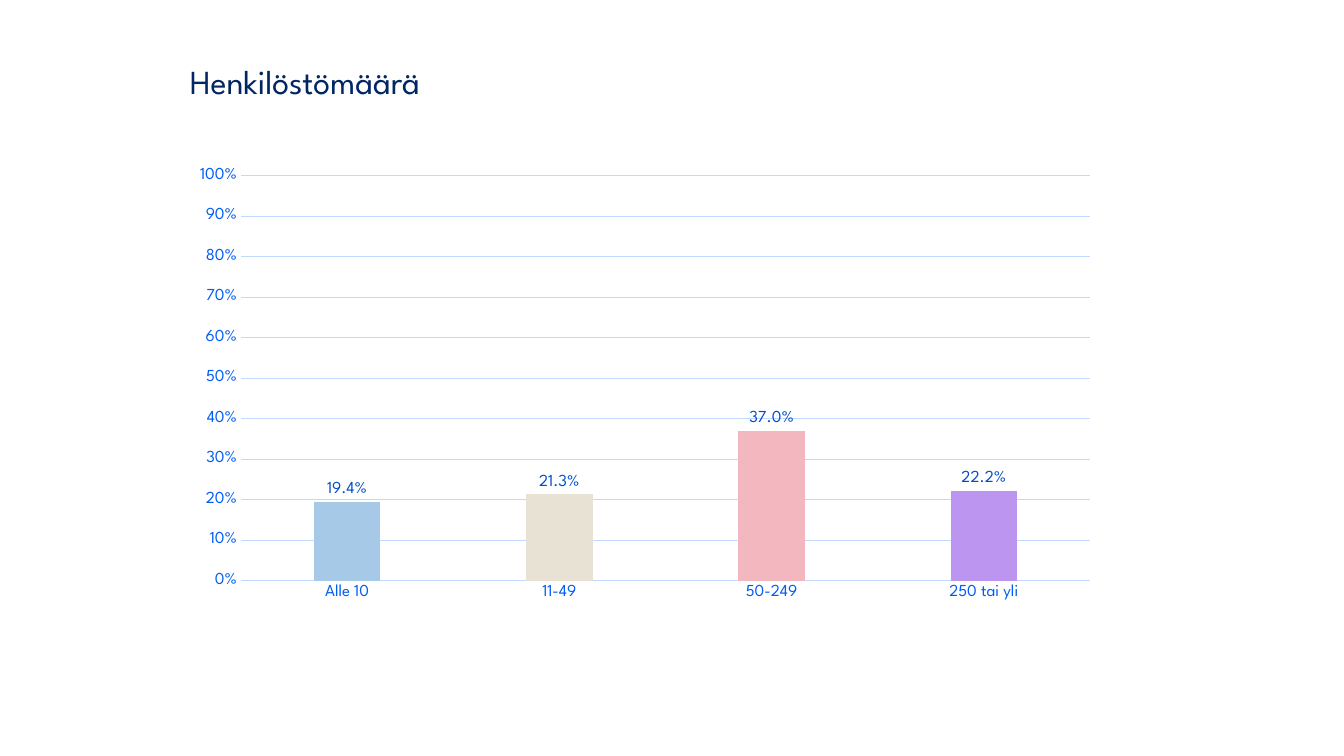
from lxml import etree
from pptx import Presentation
from pptx import util as u
from pptx.chart.data import CategoryChartData
from pptx.dml.color import RGBColor
from pptx.enum import chart as ch, text
from pptx.oxml.ns import qn

THEME = {
    "face": "League Spartan",
    "title": {"size": 24, "color": "002663"},
    "chart": {"size": 10, "color": "002663"},
    "axis": {"size": 12, "color": "005DF3"},
    "label": {"size": 12, "color": "004DCA"},
    "grid": {"width": 0.75, "color": "C1D9FF"},
}
STAFF_SHARES = [
    ("Alle 10", 0.194, "A5C9E7"),
    ("11-49", 0.213, "E8E2D5"),
    ("50-249", 0.37, "F2B7BF"),
    ("250 tai yli", 0.222, "BB95EF"),
]


def px(count):
    return u.Emu(round(count * 914400 / 100.8))


def style_font(font, role):
    values = {"name": THEME["face"], "size": u.Pt(THEME[role]["size"]), "bold": False}
    for name, value in values.items():
        setattr(font, name, value)
    font.color.rgb = RGBColor.from_string(THEME[role]["color"])


deck = Presentation()
deck.slide_width, deck.slide_height = px(1344), px(756)
page = deck.slides.add_slide(deck.slide_layouts[6])

# Title
box = page.shapes.add_textbox(px(180), px(11), px(1103), px(146))
frame = box.text_frame
frame.word_wrap = True
frame.vertical_anchor = text.MSO_ANCHOR.MIDDLE
para = frame.paragraphs[0]
para.line_spacing = 0.9
span = para.add_run()
span.text = "Henkilöstömäärä"
style_font(span.font, "title")

# Column chart
data = CategoryChartData()
data.categories = [name for name, share, color in STAFF_SHARES]
data.add_series("Series 1", [share for name, share, color in STAFF_SHARES])
chart = page.shapes.add_chart(
    ch.XL_CHART_TYPE.COLUMN_CLUSTERED, px(175), px(165), px(916), px(466), data
).chart
chart.has_title = False
chart.has_legend = False
style_font(chart.font, "chart")

# Plot area inside the chart frame
plot_area = chart.plots[0]._element.getparent()
for old_layout in plot_area.findall(qn("c:layout")):
    plot_area.remove(old_layout)
layout = etree.Element(qn("c:layout"))
manual = etree.SubElement(layout, qn("c:manualLayout"))
placement = {
    "layoutTarget": "inner", "xMode": "edge", "yMode": "edge",
    "x": 0.072, "y": 0.023, "w": 0.927, "h": 0.869,
}
for name, value in placement.items():
    etree.SubElement(manual, qn(f"c:{name}")).set("val", str(value))
plot_area.insert(0, layout)

# Axes and gridlines
shares, sizes = chart.value_axis, chart.category_axis
for axis, number_format in ((shares, "0%"), (sizes, "General")):
    axis.major_tick_mark = axis.minor_tick_mark = ch.XL_TICK_MARK.NONE
    axis.tick_labels.number_format = number_format
    axis.tick_labels.number_format_is_linked = False
    style_font(axis.tick_labels.font, "axis")
shares.minimum_scale, shares.maximum_scale, shares.major_unit = 0, 1, 0.1
shares.has_major_gridlines = True
shares.format.line.fill.background()
for line in (shares.major_gridlines.format.line, sizes.format.line):
    line.width = u.Pt(THEME["grid"]["width"])
    line.color.rgb = RGBColor.from_string(THEME["grid"]["color"])

# Columns
plot = chart.plots[0]
plot.gap_width, plot.overlap, plot.vary_by_categories = 219, -27, False
series = plot.series[0]
for index, (name, share, color) in enumerate(STAFF_SHARES):
    fill = series.points[index].format.fill
    fill.solid()
    fill.fore_color.rgb = RGBColor.from_string(color)

# Value labels
labels = series.data_labels
label_format = {
    "show_value": True,
    "number_format": "0.0%",
    "number_format_is_linked": False,
    "position": ch.XL_LABEL_POSITION.OUTSIDE_END,
}
for name, value in label_format.items():
    setattr(labels, name, value)
style_font(labels.font, "label")

deck.save("out.pptx")
